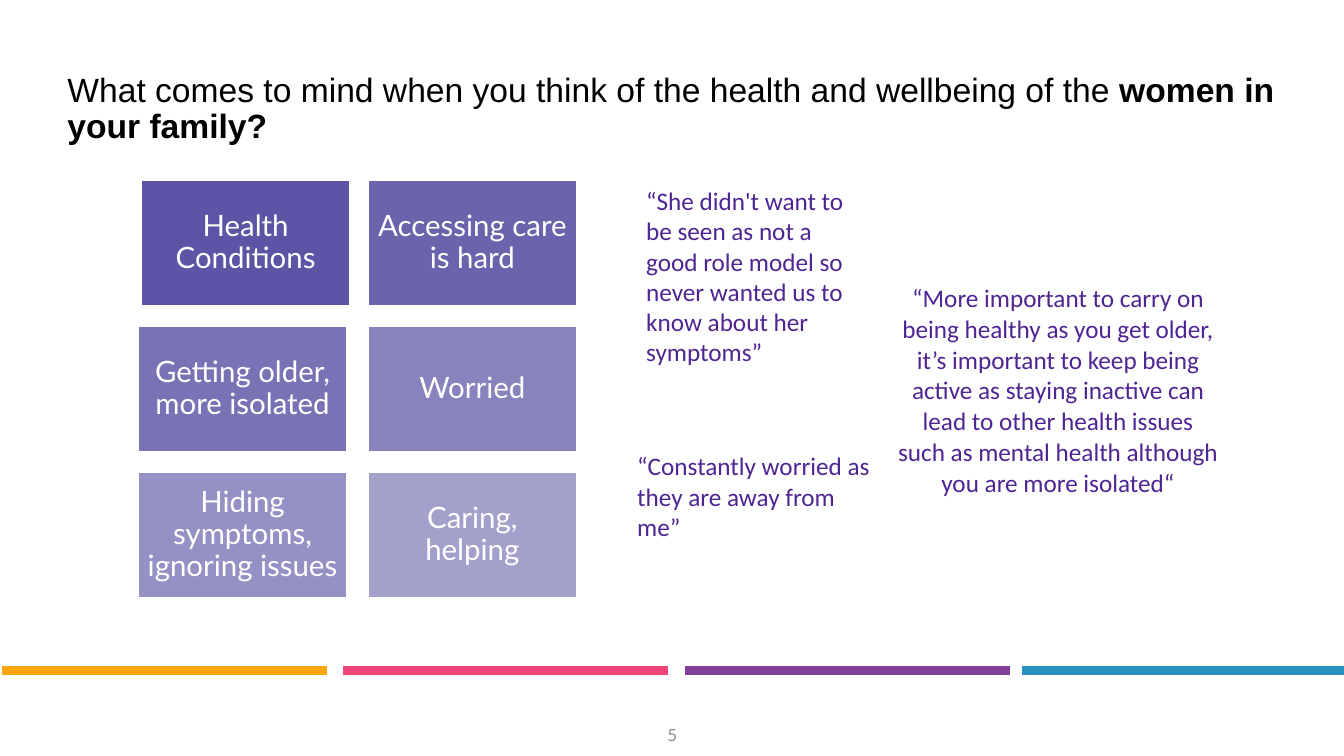
from lxml import etree
from pptx import Presentation
from pptx.dml.color import RGBColor
from pptx.enum.shapes import MSO_CONNECTOR, MSO_SHAPE
from pptx.enum.text import MSO_ANCHOR, PP_ALIGN
from pptx.oxml.ns import qn
from pptx.util import Inches, Pt

LEFT, CENTER = PP_ALIGN.LEFT, PP_ALIGN.CENTER
TOP, MIDDLE = MSO_ANCHOR.TOP, MSO_ANCHOR.MIDDLE
STRAIGHT = MSO_CONNECTOR.STRAIGHT
RECTANGLE = MSO_SHAPE.RECTANGLE
WIDTH, HEIGHT = Inches(13.33), Inches(7.5)

PURPLE, QUOTE_PURPLE, WHITE = "4B429B", "4F2593", "FFFFFF"
QUOTE_STYLE = {"size": 18, "font": "Calibri", "color": QUOTE_PURPLE}
THEMES = [
    "Health Conditions", "Accessing care is hard",
    "Getting older, more isolated", "Worried",
    "Hiding symptoms, ignoring issues", "Caring, helping",
]
ROLE_MODEL_QUOTE = ("“She didn't want to be seen as not a good role model so "
                    "never wanted us to know about her symptoms”")
WORRIED_QUOTE = "“Constantly worried as they are away from me”"
ACTIVE_QUOTE = ("“More important to carry on being healthy as you get older, "
                "it’s important to keep being active as staying inactive can "
                "lead to other health issues such as mental health although "
                "you are more isolated“")
STRIPES = [(0.15, "F9A50E"), (25.51, "F24678"), (50.94, "853E9A"), (76.07, "2A90C0")]
STRIPE_LENGTH = 24.2


def rgb(color):
    return RGBColor.from_string(color)


def place(left, top, width, height):
    return (round(WIDTH * left / 100), round(HEIGHT * top / 100),
            round(WIDTH * width / 100), round(HEIGHT * height / 100))


def part(box, left, top, width, height):
    return (box[0] + box[2] * left, box[1] + box[3] * top,
            box[2] * width, box[3] * height)


def write(frame, text, *, size, font, color, bold_tail="", align=LEFT, spacing=None):
    frame.word_wrap = True
    paragraph = frame.paragraphs[0]
    paragraph.alignment = align
    paragraph.line_spacing = spacing
    for words, bold in ((text, False), (bold_tail, True)):
        if words:
            run = paragraph.add_run()
            run.text = words
            run.font.name = font
            run.font.size = Pt(size)
            run.font.bold = bold
            run.font.color.rgb = rgb(color)


def add_text(slide, box, text, anchor=TOP, **style):
    frame = slide.shapes.add_textbox(*place(*box)).text_frame
    frame.vertical_anchor = anchor
    write(frame, text, **style)


def add_stripes(slide, top):
    for left, color in STRIPES:
        x, y, length, _ = place(left, top, min(STRIPE_LENGTH, 100 - left), 0)
        stripe = slide.shapes.add_connector(STRAIGHT, x, y, x + length, y)
        stripe.line.color.rgb = rgb(color)
        stripe.line.width = Pt(6)
        etree.SubElement(stripe._element.spPr, qn("a:effectLst"))


def add_theme_card(slide, box, text, opacity):
    card = slide.shapes.add_shape(RECTANGLE, *place(*box))
    card.shadow.inherit = False
    card.fill.solid()
    card.fill.fore_color.rgb = rgb(PURPLE)
    fill_color = card._element.spPr.find(qn("a:solidFill")).find(qn("a:srgbClr"))
    etree.SubElement(fill_color, qn("a:alpha"), val=str(opacity * 1000))
    card.line.color.rgb = rgb(WHITE)
    card.line.width = Pt(1)
    frame = card.text_frame
    frame.margin_left = frame.margin_right = Inches(0.09)
    frame.margin_top = frame.margin_bottom = Inches(0.09)
    frame.vertical_anchor = MIDDLE
    write(frame, text, size=21, font="Lato", color=WHITE, align=CENTER, spacing=0.9)


def add_themes(slide, box):
    card_width, card_height = 0.476, 0.3
    for index, text in enumerate(THEMES):
        row, column = divmod(index, 2)
        nudge = 0.007 if index == 0 else 0
        card_box = part(box, column * (1 - card_width) + nudge,
                        row * (1 - card_height) / 2, card_width, card_height)
        add_theme_card(slide, card_box, text, 90 - 8 * index)


def add_quote_table(slide, box, text, margin, align):
    table = slide.shapes.add_table(1, 1, *place(*box)).table
    table.first_row = table.horz_banding = False
    cell = table.cell(0, 0)
    cell.fill.background()
    cell.vertical_anchor = MIDDLE
    cell.margin_left = cell.margin_right = cell.margin_top = Inches(margin)
    cell.margin_bottom = Inches(margin + 0.04)
    write(cell.text_frame, text, align=align, **QUOTE_STYLE)


def add_quotes(slide, box):
    add_quote_table(slide, part(box, 0.45, 0, 0.55, 1), ACTIVE_QUOTE, 0, CENTER)
    add_quote_table(slide, part(box, 0, 0.5, 0.41, 0.5), WORRIED_QUOTE, 0.01, LEFT)
    add_text(slide, part(box, 0, 0, 0.41, 0.45), ROLE_MODEL_QUOTE, **QUOTE_STYLE)


def build_themes_slide(presentation):
    slide = presentation.slides.add_slide(presentation.slide_layouts[6])
    add_stripes(slide, 88.7)
    add_text(slide, (38.78, 94.53, 22.5, 5.33), "5", anchor=MIDDLE,
             size=12, font="Lato", color="8C8C8C", align=CENTER)
    add_text(slide, (4.28, 9.07, 92.57, 13.87),
             "What comes to mind when you think of the health and wellbeing of the",
             bold_tail=" women in your family?",
             size=24, font="Arial", color="000000", spacing=0.9)
    add_themes(slide, (10.28, 23.87, 32.63, 55.2))
    add_quotes(slide, (47.34, 23.87, 43.29, 56.27))


def main():
    presentation = Presentation()
    presentation.slide_width, presentation.slide_height = WIDTH, HEIGHT
    build_themes_slide(presentation)
    presentation.save("out.pptx")


if __name__ == "__main__":
    main()
